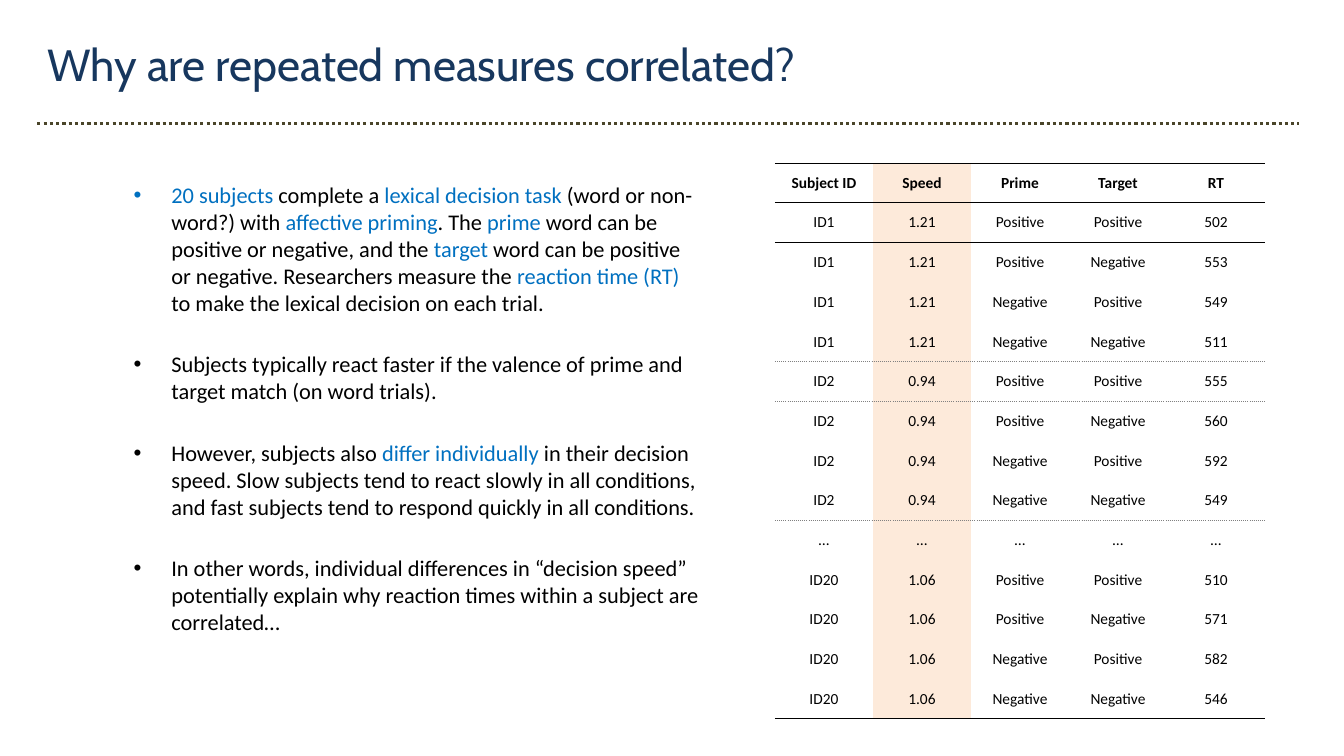
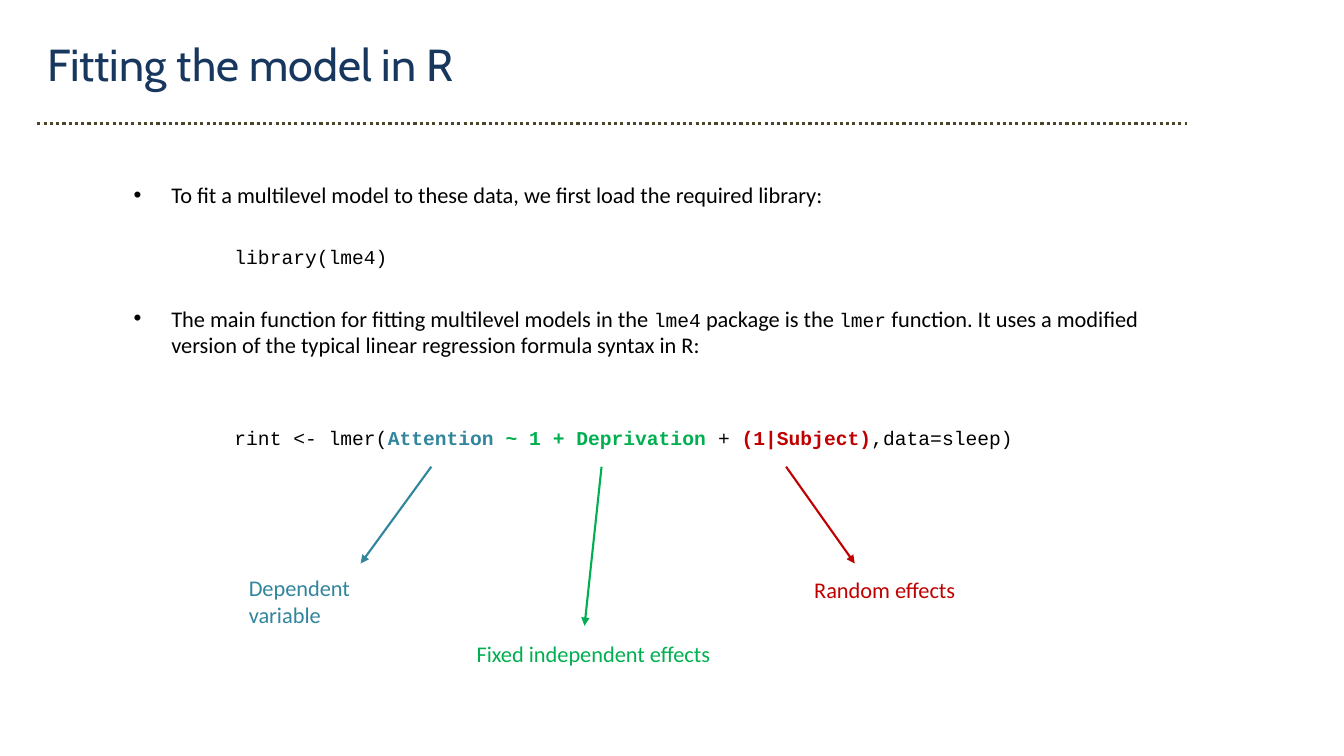
from itertools import product

from pptx import Presentation
from pptx.dml.color import RGBColor
from pptx.enum.dml import MSO_LINE
from pptx.enum.shapes import MSO_CONNECTOR
from pptx.enum.text import MSO_ANCHOR, PP_ALIGN
from pptx.oxml.ns import qn
from pptx.util import Cm, Pt
from lxml import etree

STRAIGHT = MSO_CONNECTOR.STRAIGHT
DOTTED = MSO_LINE.ROUND_DOT
MIDDLE = MSO_ANCHOR.MIDDLE
CENTER = PP_ALIGN.CENTER

BLACK = RGBColor(0x00, 0x00, 0x00)
NAVY = RGBColor(0x17, 0x37, 0x5E)
BROWN = RGBColor(0x4A, 0x45, 0x2A)
BLUE = RGBColor(0x00, 0x70, 0xC0)
TEAL = RGBColor(0x31, 0x85, 0x9C)
GREEN = RGBColor(0x00, 0xB0, 0x50)
RED = RGBColor(0xC0, 0x00, 0x00)
GRAY = RGBColor(0x80, 0x80, 0x80)
PEACH = RGBColor(0xFD, 0xEA, 0xDA)

TITLE_FONT = ("Cabin", 32)
BODY_FONT = ("Calibri", 16)
CODE_FONT = ("Courier New", 14)
TABLE_FONT = ("Calibri", 11)


def plain(text, color=BLACK):
    return text, BODY_FONT, color, False


def key(text):
    return plain(text, BLUE)


def code(text, color=BLACK, bold=False):
    return text, CODE_FONT, color, bold


BULLET, CODE_LINE = "bullet", "code line"

MEASURES_TEXT = [
    (BULLET, 0, [
        key("20 subjects "), plain("complete a "), key("lexical decision task "),
        plain("(word or non-word?) with "), key("affective priming"),
        plain(". The "), key("prime "),
        plain("word can be positive or negative, and the "), key("target "),
        plain("word can be positive or negative. Researchers measure the "),
        key("reaction time (RT)"),
        plain(" to make the lexical decision on each trial."),
    ]),
    (BULLET, 24.8, [plain("Subjects typically react faster if the valence of prime "
                          "and target match (on word trials).")]),
    (BULLET, 24.8, [
        plain("However, subjects also "), key("differ individually "),
        plain("in their decision speed. Slow subjects tend to react slowly in all "
              "conditions, and fast subjects tend to respond quickly in all conditions."),
    ]),
    (BULLET, 24.8, [plain("In other words, individual differences in “decision speed” "
                          "potentially explain why reaction times within a subject "
                          "are correlated…")]),
]

MODEL_TEXT = [
    (BULLET, 0, [plain("To fit a multilevel model to these data, we first load the "
                       "required library:")]),
    (CODE_LINE, 26, [code("library(lme4)")]),
    (BULLET, 26, [
        plain("The main function for fitting multilevel models in the "), code("lme4"),
        plain(" package is the "), code("lmer"),
        plain(" function. It uses a modified version of the typical linear "
              "regression formula syntax in R:"),
    ]),
    (CODE_LINE, 48, [
        code("rint <- lmer("), code("Attention", TEAL, True),
        code(" ~ 1 + Deprivation", GREEN, True), code(" + "),
        code("(1|Subject)", RED, True), code(",data=sleep)"),
    ]),
]

HEADERS = ["Subject ID", "Speed", "Prime", "Target", "RT"]
SPEED_COLUMN = HEADERS.index("Speed")
CONDITIONS = list(product(["Positive", "Negative"], repeat=2))
SUBJECTS = [
    ("ID1", "1.21", [502, 553, 549, 511]),
    ("ID2", "0.94", [555, 560, 592, 549]),
    ("ID20", "1.06", [510, 571, 582, 546]),
]
SOLID_RULE, DOTTED_RULE = (BLACK, "solid"), (GRAY, "sysDot")
RULES = {0: SOLID_RULE, 1: SOLID_RULE, 2: SOLID_RULE, 5: DOTTED_RULE,
         6: DOTTED_RULE, 9: DOTTED_RULE, 14: SOLID_RULE}
COLUMN_WIDTH, ROW_HEIGHT = 2.47, 1

FORMULA_PARTS = [
    ("Dependent variable", TEAL, (6.02, 14.35, 3.6), (10.87, 9.09, 14.2)),
    ("Fixed independent effects", GREEN, (11.76, 16, 6.6), (15.16, 14.73, 15.77)),
    ("Random effects", RED, (20.27, 14.4, 4.4), (19.81, 21.54, 14.2)),
]
ARROW_TOP = 11.76


def style_run(run, font, color, bold=False):
    run.font.name, size = font
    run.font.size = Pt(size)
    run.font.color.rgb = color
    run.font.bold = bold


def add_text(slide, left, top, width, height):
    box = slide.shapes.add_textbox(Cm(left), Cm(top), Cm(width), Cm(height))
    box.text_frame.word_wrap = True
    return box.text_frame


def add_label(slide, text, font, color, left, top, width, height):
    frame = add_text(slide, left, top, width, height)
    frame.text = text
    style_run(frame.paragraphs[0].runs[0], font, color)


def add_line(slide, start, end, color, width):
    line = slide.shapes.add_connector(STRAIGHT, *map(Cm, start + end))
    line.line.color.rgb = color
    line.line.width = Pt(width)
    etree.SubElement(line._element.spPr, qn("a:effectLst"))
    return line


def add_titled_slide(deck, title, rule_end):
    slide = deck.slides.add_slide(deck.slide_layouts[6])
    add_label(slide, title, TITLE_FONT, NAVY, 0.94, 0.81, 29.59, 1.63)
    rule = add_line(slide, (0.94, 3.12), (rule_end, 3.12), BROWN, 2.25)
    rule.line.dash_style = DOTTED
    return slide


def set_indent(para, kind):
    properties = para._p.get_or_add_pPr()
    if kind == BULLET:
        properties.set("marL", str(Cm(0.95)))
        properties.set("indent", str(Cm(-0.95)))
        etree.SubElement(properties, qn("a:buFont"), typeface="Arial")
        etree.SubElement(properties, qn("a:buChar"), char="•")
    else:
        properties.set("marL", str(Cm(2.54)))
        properties.set("indent", "0")


def add_body(slide, paragraphs, width):
    frame = add_text(slide, 3.12, 4.45, width, 13.69)
    for index, (kind, gap, spans) in enumerate(paragraphs):
        para = frame.add_paragraph() if index else frame.paragraphs[0]
        para.space_before = Pt(gap)
        set_indent(para, kind)
        for text, font, color, bold in spans:
            span = para.add_run()
            span.text = text
            style_run(span, font, color, bold)


def set_border(cell, side, rule):
    border = etree.SubElement(cell._tc.get_or_add_tcPr(), qn(f"a:ln{side}"))
    if rule is None:
        border.set("w", "0")
        etree.SubElement(border, qn("a:noFill"))
        return
    color, dash = rule
    border.set("w", str(Pt(1)))
    fill = etree.SubElement(border, qn("a:solidFill"))
    etree.SubElement(fill, qn("a:srgbClr"), val=str(color))
    etree.SubElement(border, qn("a:prstDash"), val=dash)


def trial_rows():
    rows = [HEADERS]
    for subject, speed, times in SUBJECTS:
        if subject == "ID20":
            rows.append(["…"] * len(HEADERS))
        for (prime, target), time in zip(CONDITIONS, times):
            rows.append([subject, speed, prime, target, str(time)])
    return rows


def add_trial_table(slide):
    rows = trial_rows()
    table = slide.shapes.add_table(
        len(rows), len(HEADERS), Cm(19.53), Cm(4.11),
        Cm(COLUMN_WIDTH * len(HEADERS)), Cm(ROW_HEIGHT * len(rows))).table
    table.first_row = False
    table.horz_banding = False
    for column in table.columns:
        column.width = Cm(COLUMN_WIDTH)
    for row_index, row in enumerate(rows):
        table.rows[row_index].height = Cm(ROW_HEIGHT)
        for column_index, text in enumerate(row):
            cell = table.cell(row_index, column_index)
            cell.text = text
            cell.vertical_anchor = MIDDLE
            para = cell.text_frame.paragraphs[0]
            para.alignment = CENTER
            style_run(para.runs[0], TABLE_FONT, BLACK, row_index == 0)
            borders = {"L": None, "R": None, "T": RULES.get(row_index),
                       "B": RULES.get(row_index + 1)}
            for side, rule in borders.items():
                set_border(cell, side, rule)
            if column_index == SPEED_COLUMN:
                cell.fill.solid()
                cell.fill.fore_color.rgb = PEACH
            else:
                cell.fill.background()


def add_formula_part(slide, text, color, place, arrow):
    left, top, width = place
    add_label(slide, text, BODY_FONT, color, left, top, width, 0.94)
    start_x, end_x, end_y = arrow
    line = add_line(slide, (start_x, ARROW_TOP), (end_x, end_y), color, 1.5)
    etree.SubElement(line.line._get_or_add_ln(), qn("a:tailEnd"), type="triangle")


def main():
    deck = Presentation()
    deck.slide_width, deck.slide_height = Cm(33.87), Cm(19.05)

    measures = add_titled_slide(deck, "Why are repeated measures correlated?", 32.74)
    add_body(measures, MEASURES_TEXT, 14.81)
    add_trial_table(measures)

    model = add_titled_slide(deck, "Fitting the model in R", 29.92)
    add_body(model, MODEL_TEXT, 27.2)
    for part in FORMULA_PARTS:
        add_formula_part(model, *part)

    deck.save("out.pptx")


if __name__ == "__main__":
    main()
